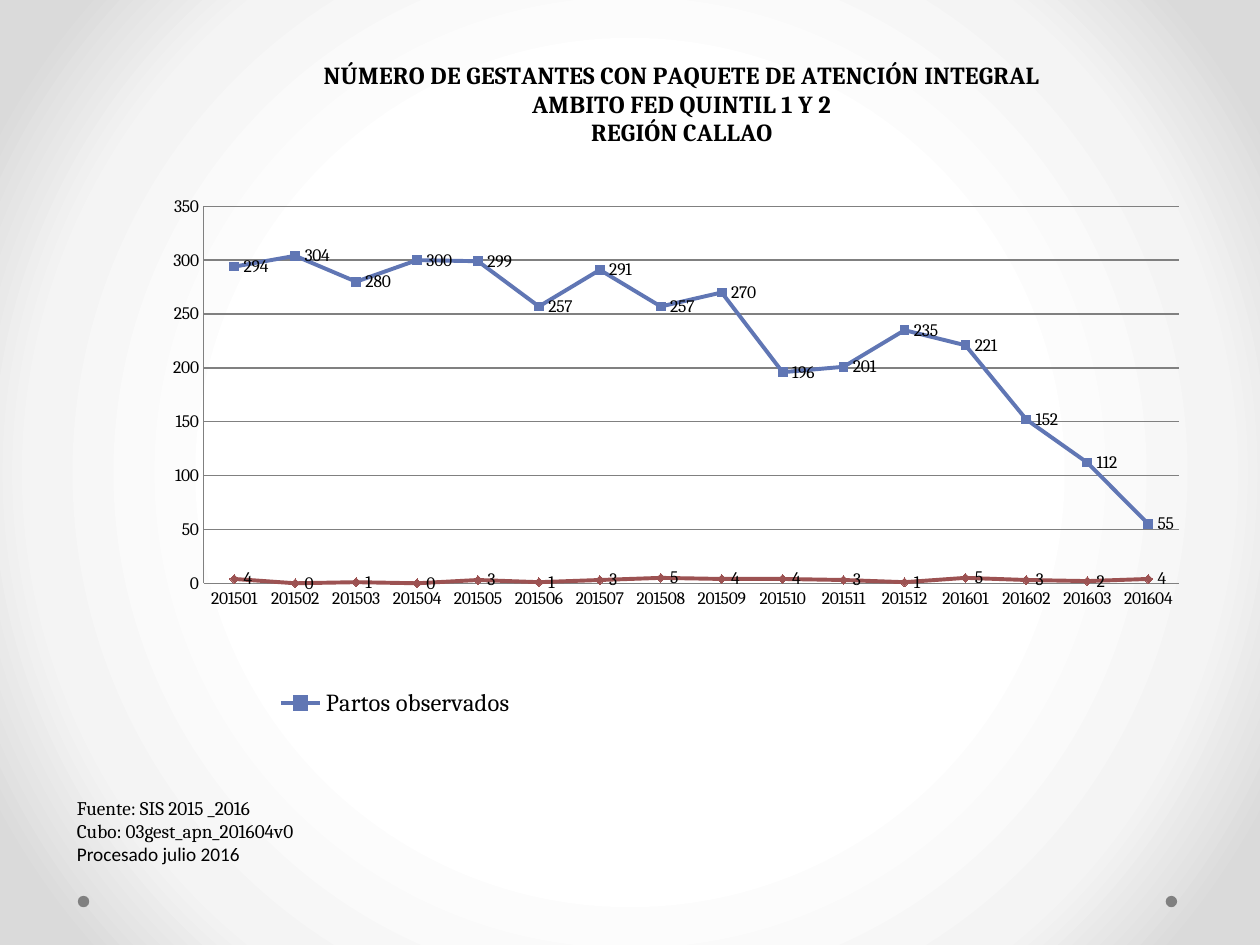
from lxml.etree import SubElement
from pptx import Presentation
from pptx.chart.data import CategoryChartData
from pptx.dml.color import RGBColor
from pptx.enum.chart import (XL_CHART_TYPE, XL_LABEL_POSITION, XL_LEGEND_POSITION,
                             XL_MARKER_STYLE, XL_TICK_MARK)
from pptx.enum.shapes import MSO_SHAPE
from pptx.enum.text import PP_ALIGN
from pptx.oxml import parse_xml
from pptx.oxml.ns import nsdecls, qn
from pptx.util import Cm, Pt

HEADING = ["NÚMERO DE GESTANTES CON PAQUETE DE ATENCIÓN INTEGRAL",
           "AMBITO FED QUINTIL 1 Y 2", "REGIÓN CALLAO"]
MONTHS = ([f"2015{month:02}" for month in range(1, 13)]
          + [f"2016{month:02}" for month in range(1, 5)])
SERIES = [
    ("Partos observados", "6076B4", XL_MARKER_STYLE.SQUARE, 5,
     [294, 304, 280, 300, 299, 257, 291, 257, 270, 196, 201, 235, 221, 152, 112, 55]),
    ("", "9C5252", XL_MARKER_STYLE.DIAMOND, 5,
     [4, 0, 1, 0, 3, 1, 3, 5, 4, 4, 3, 1, 5, 3, 2, 4]),
]
SOURCES = [("Fuente: SIS 2015 _2016", "Cambria"),
           ("Cubo: 03gest_apn_201604v0", "Cambria"),
           ("Procesado julio 2016", "Calibri")]
BACKDROP = [(50, "FFFFFF"), (76, "F4F4F4"), (92, "DADADA")]
DOT_LEFTS = [1.57, 23.5]


def color(hex_text):
    return RGBColor.from_string(hex_text)


def style_font(font, name, size, bold=False):
    font.name, font.size, font.bold = name, Pt(size), bold
    font.color.rgb = color("000000")


def style_line(line, hex_text, width):
    line.color.rgb = color(hex_text)
    line.width = Pt(width)


def place(part, index, **fractions):
    for old in part.findall(qn("c:layout")):
        part.remove(old)
    layout = parse_xml(f"<c:layout {nsdecls('c')}/>")
    manual = SubElement(layout, qn("c:manualLayout"))
    if part.tag == qn("c:plotArea"):
        SubElement(manual, qn("c:layoutTarget"), val="inner")
    for side in "xy":
        SubElement(manual, qn(f"c:{side}Mode"), val="edge")
    for name, fraction in fractions.items():
        SubElement(manual, qn(f"c:{name}"), val=str(fraction))
    part.insert(index, layout)


def paint_background(slide):
    fill = slide.background.fill
    fill.gradient()
    gradient = slide.background._cSld.find(".//" + qn("a:gradFill"))
    for child in list(gradient):
        gradient.remove(child)
    stops = SubElement(gradient, qn("a:gsLst"))
    for position, hex_text in BACKDROP:
        stop = SubElement(stops, qn("a:gs"), pos=str(position * 1000))
        SubElement(stop, qn("a:srgbClr"), val=hex_text)
    circle = SubElement(gradient, qn("a:path"), path="circle")
    SubElement(circle, qn("a:fillToRect"), l="50000", t="50000", r="50000", b="50000")


def add_dots(slide):
    for left in DOT_LEFTS:
        dot = slide.shapes.add_shape(MSO_SHAPE.OVAL, Cm(left), Cm(18.06), Cm(0.23), Cm(0.23))
        dot.shadow.inherit = False
        dot.fill.solid()
        dot.fill.fore_color.rgb = color("808080")
        dot.line.fill.background()


def add_sources(slide):
    frame = slide.shapes.add_textbox(Cm(1.3), Cm(15.93), Cm(7.6), Cm(1.68)).text_frame
    frame.word_wrap = True
    frame.text = "\n".join(text for text, _ in SOURCES)
    for paragraph, (_, font_name) in zip(frame.paragraphs, SOURCES):
        style_font(paragraph.font, font_name, 11)


def add_births_chart(slide):
    data = CategoryChartData(number_format="0")
    data.categories = MONTHS
    for name, *_, values in SERIES:
        data.add_series(name, values)
    chart = slide.shapes.add_chart(XL_CHART_TYPE.LINE_MARKERS, Cm(1.3), Cm(1.12),
                                   Cm(23.4), Cm(13.82), data).chart
    style_font(chart.font, "Cambria", 10)

    heading = chart.chart_title
    heading.text_frame.text = "\n".join(HEADING)
    for paragraph in heading.text_frame.paragraphs:
        paragraph.alignment = PP_ALIGN.CENTER
        style_font(paragraph.font, "Cambria", 14, bold=True)
    place(heading._element, 1, x=0.22, y=0)

    chart.plots[0].vary_by_categories = False
    for series, (_, hue, marker, size, _) in zip(chart.plots[0].series, SERIES):
        series.smooth = False
        style_line(series.format.line, hue, 2.25)
        series.marker.style, series.marker.size = marker, size
        series.marker.format.fill.solid()
        series.marker.format.fill.fore_color.rgb = color(hue)
        style_line(series.marker.format.line, hue, 0.75)
        labels = series.data_labels
        labels.show_value = True
        labels.position = XL_LABEL_POSITION.RIGHT
        style_font(labels.font, "Cambria", 10)

    for axis in (chart.category_axis, chart.value_axis):
        axis.major_tick_mark = axis.minor_tick_mark = XL_TICK_MARK.NONE
        style_line(axis.format.line, "808080", 0.75)
    values_axis = chart.value_axis
    values_axis.minimum_scale, values_axis.maximum_scale = 0, 350
    values_axis.major_unit = 50
    values_axis.tick_labels.number_format = "0"
    values_axis.tick_labels.number_format_is_linked = False
    style_line(values_axis.major_gridlines.format.line, "808080", 0.75)
    place(chart._chartSpace.chart.plotArea, 0, x=0.12, y=0.22, w=0.84, h=0.55)

    chart.has_legend = True
    legend = chart.legend
    legend.position = XL_LEGEND_POSITION.RIGHT
    legend.include_in_layout = False
    style_font(legend.font, "Cambria", 14)
    unnamed = parse_xml(f'<c:legendEntry {nsdecls("c")}><c:idx val="1"/>'
                        '<c:delete val="1"/></c:legendEntry>')
    legend._element.insert(1, unnamed)
    place(legend._element, 2, x=0.16, y=0.91, w=0.25, h=0.07)


def main():
    deck = Presentation()
    deck.slide_width, deck.slide_height = Cm(25.4), Cm(19.05)
    slide = deck.slides.add_slide(deck.slide_layouts[6])
    paint_background(slide)
    add_dots(slide)
    add_sources(slide)
    add_births_chart(slide)
    deck.save("out.pptx")


if __name__ == "__main__":
    main()
